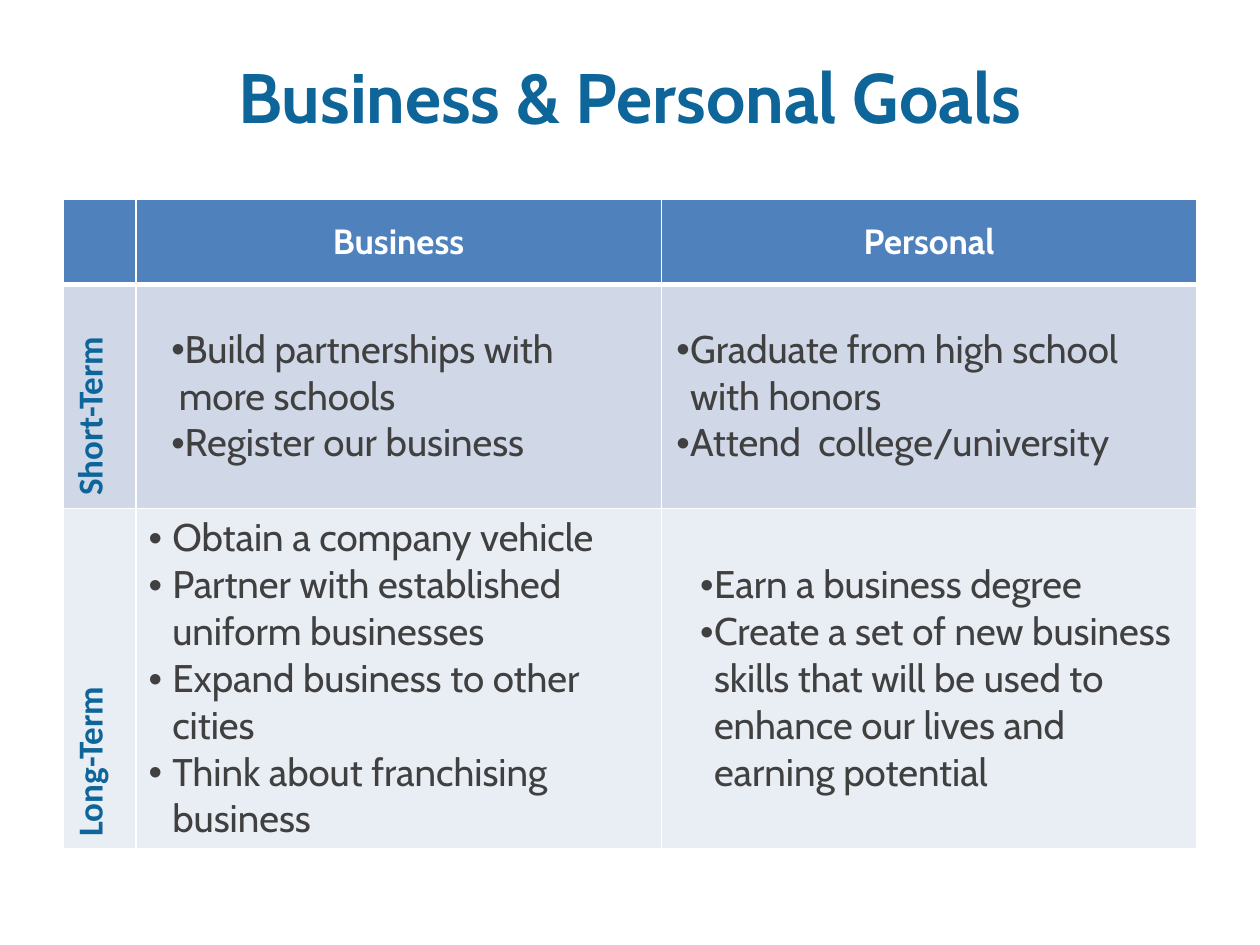
from lxml import etree
from pptx import Presentation
from pptx.dml.color import RGBColor
from pptx.enum.text import MSO_ANCHOR, PP_ALIGN
from pptx.oxml.ns import qn
from pptx.util import Cm, Pt

MIDDLE = MSO_ANCHOR.MIDDLE
CENTER = PP_ALIGN.CENTER
LEFT = PP_ALIGN.LEFT
TITLE_ONLY_LAYOUT = 5

COLORS = {
    "accent": "0D659A",
    "header": "4F81BD",
    "short_term": "D0D8E8",
    "long_term": "E9EDF4",
    "body": "404040",
    "white": "FFFFFF",
}
HEADINGS = ["Business", "Personal"]
COLUMN_WIDTHS = [1.47, 10.59, 10.8]
ROW_HEIGHTS = [1.71, 4.52, 6.86]
TERMS = [
    ("Short-Term", "short_term", [
        (0.61, 0.15, 0.97, [
            "Build partnerships with more schools",
            "Register our business",
        ]),
        (0.33, 0.28, None, [
            "Graduate from high school with honors",
            "Attend  college/university",
        ]),
    ]),
    ("Long-Term", "long_term", [
        (0.48, 0.48, None, [
            "Obtain a company vehicle",
            "Partner with established uniform businesses",
            "Expand business to other cities",
            "Think about franchising business",
        ]),
        (0.81, 0.28, None, [
            "Earn a business degree",
            "Create a set of new business skills that will be used to "
            "enhance our lives and earning potential",
        ]),
    ]),
]


def add_run(paragraph, text, size, color, bold=False, font="Cabin"):
    run = paragraph.add_run()
    run.text = text
    run.font.name = font
    run.font.size = Pt(size)
    run.font.bold = bold
    run.font.color.rgb = RGBColor.from_string(COLORS[color])


def add_title(slide, text):
    title = slide.shapes.title
    title.left, title.top = Cm(1.27), Cm(0.76)
    title.width, title.height = Cm(22.86), Cm(2.84)
    title.text_frame.vertical_anchor = MIDDLE
    paragraph = title.text_frame.paragraphs[0]
    paragraph.alignment = CENTER
    paragraph.line_spacing = Pt(34)
    add_run(paragraph, text, 40, "accent", bold=True)


def style_cell(cell, fill, bottom=1):
    properties = cell._tc.get_or_add_tcPr()
    for side, width in (("L", 1), ("R", 1), ("T", 1), ("B", bottom)):
        border = etree.SubElement(properties, qn(f"a:ln{side}"), w=str(Pt(width)))
        solid = etree.SubElement(border, qn("a:solidFill"))
        etree.SubElement(solid, qn("a:srgbClr"), val=COLORS["white"])
    cell.fill.solid()
    cell.fill.fore_color.rgb = RGBColor.from_string(COLORS[fill])
    cell.vertical_anchor = MIDDLE


def fill_heading(cell, text):
    paragraph = cell.text_frame.paragraphs[0]
    paragraph.alignment = CENTER
    add_run(paragraph, text, 20, "white", bold=True)


def fill_term(cell, text):
    cell._tc.get_or_add_tcPr().set("vert", "vert270")
    add_run(cell.text_frame.paragraphs[0], text, 20, "accent", bold=True, font="Calibri")


def add_bullet(paragraph, indent, hanging, tab):
    properties = paragraph._p.get_or_add_pPr()
    properties.set("marL", str(Cm(indent)))
    properties.set("indent", str(-Cm(hanging)))
    etree.SubElement(properties, qn("a:buFont"), typeface="Arial")
    etree.SubElement(properties, qn("a:buChar"), char="•")
    if tab is not None:
        tabs = etree.SubElement(properties, qn("a:tabLst"))
        etree.SubElement(tabs, qn("a:tab"), pos=str(Cm(tab)), algn="l")


def fill_goals(cell, indent, hanging, tab, goals):
    frame = cell.text_frame
    for index, goal in enumerate(goals):
        paragraph = frame.add_paragraph() if index else frame.paragraphs[0]
        add_bullet(paragraph, indent, hanging, tab)
        paragraph.alignment = LEFT
        add_run(paragraph, goal, 22, "body")


def add_goals_table(slide):
    table = slide.shapes.add_table(
        len(ROW_HEIGHTS), len(COLUMN_WIDTHS), Cm(1.27), Cm(4.02),
        Cm(sum(COLUMN_WIDTHS)), Cm(sum(ROW_HEIGHTS)),
    ).table
    table.horz_banding = False
    for column, width in zip(table.columns, COLUMN_WIDTHS):
        column.width = Cm(width)
    for row, height in zip(table.rows, ROW_HEIGHTS):
        row.height = Cm(height)

    for column in range(len(COLUMN_WIDTHS)):
        style_cell(table.cell(0, column), "header", bottom=3)
    for column, heading in enumerate(HEADINGS, start=1):
        fill_heading(table.cell(0, column), heading)

    for row, (term, fill, goal_lists) in enumerate(TERMS, start=1):
        for column in range(len(COLUMN_WIDTHS)):
            style_cell(table.cell(row, column), fill)
        fill_term(table.cell(row, 0), term)
        for column, goal_list in enumerate(goal_lists, start=1):
            fill_goals(table.cell(row, column), *goal_list)


def main():
    presentation = Presentation()
    presentation.slide_width = Cm(25.4)
    presentation.slide_height = Cm(19.05)
    slide = presentation.slides.add_slide(presentation.slide_layouts[TITLE_ONLY_LAYOUT])
    add_title(slide, "Business & Personal Goals")
    add_goals_table(slide)
    presentation.save("out.pptx")


if __name__ == "__main__":
    main()
